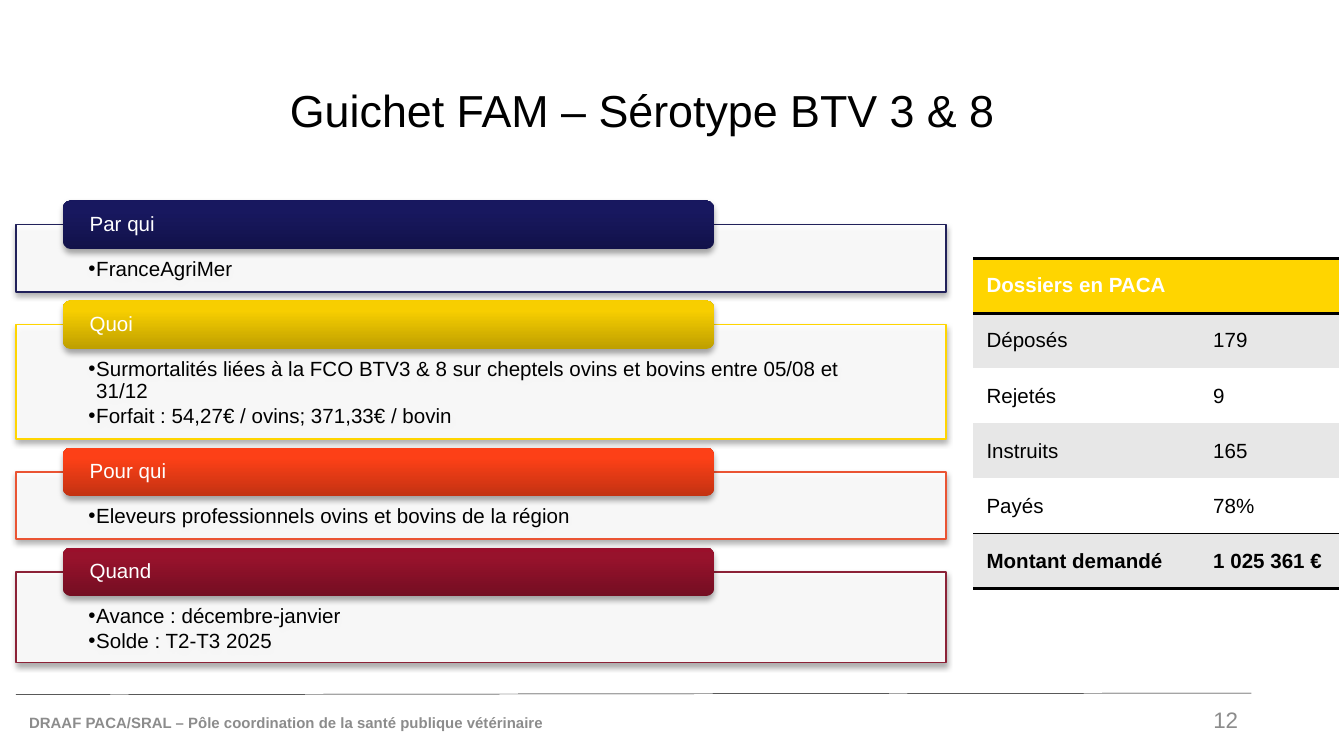
from copy import deepcopy

from lxml.etree import SubElement
from pptx import Presentation
from pptx.dml.color import RGBColor
from pptx.enum.shapes import MSO_CONNECTOR, MSO_SHAPE
from pptx.enum.text import MSO_ANCHOR, PP_ALIGN
from pptx.oxml.ns import qn
from pptx.util import Cm, Pt

BLACK = RGBColor(0x00, 0x00, 0x00)
WHITE = RGBColor(0xFF, 0xFF, 0xFF)
GREY = RGBColor(0x8C, 0x8C, 0x8C)
PALE = RGBColor(0xE7, 0xE7, 0xE7)
NAVY = RGBColor(0x21, 0x21, 0x5A)
GOLD = RGBColor(0xFF, 0xD5, 0x00)
CORAL = RGBColor(0xEA, 0x54, 0x33)
WINE = RGBColor(0x8C, 0x22, 0x37)
NAVIES = [RGBColor(0x12, 0x12, 0x4A), RGBColor(0x18, 0x18, 0x5F), RGBColor(0x16, 0x16, 0x61)]
GOLDS = [RGBColor(0xBE, 0x9F, 0x00), RGBColor(0xF7, 0xCE, 0x00), RGBColor(0xF8, 0xCF, 0x00)]
CORALS = [RGBColor(0xC3, 0x32, 0x12), RGBColor(0xFD, 0x40, 0x17), RGBColor(0xFF, 0x40, 0x16)]
WINES = [RGBColor(0x74, 0x0E, 0x22), RGBColor(0x97, 0x12, 0x2C), RGBColor(0x9A, 0x0F, 0x2B)]

PANELS = [
    ("Par qui", ["FranceAgriMer"], 1.27, NAVY, NAVIES),
    ("Quoi", [
        "Surmortalités liées à la FCO BTV3 & 8 sur cheptels ovins et bovins entre 05/08 et 31/12",
        "Forfait : 54,27€ / ovins; 371,33€ / bovin",
    ], 2.16, GOLD, GOLDS),
    ("Pour qui", ["Eleveurs professionnels ovins et bovins de la région"], 1.27, CORAL, CORALS),
    ("Quand", ["Avance : décembre-janvier", "Solde : T2-T3 2025"], 1.72, WINE, WINES),
]
ROWS = [
    ("Dossiers en PACA", ""),
    ("Déposés", "179"),
    ("Rejetés", "9"),
    ("Instruits", "165"),
    ("Payés", "78%"),
    ("Montant demandé", "1 025 361 €"),
]


def put(obj, **vals):
    """Set each named format value on an object."""
    for key, val in vals.items():
        setattr(obj, key, val)


def write(par, text, size, color, bold=False, **vals):
    """Fill one paragraph with formatted text."""
    put(par, text=text, **vals)
    put(par.font, name="Arial", size=Pt(size), bold=bold)
    par.font.color.rgb = color


def label(slide, box, text, size, color, bold=False, **vals):
    """Place one line of text in a box, centred in height."""
    frame = slide.shapes.add_textbox(*map(Cm, box)).text_frame
    put(frame, word_wrap=True, vertical_anchor=MSO_ANCHOR.MIDDLE)
    write(frame.paragraphs[0], text, size, color, bold, **vals)


def shade(shape):
    """Give a shape a soft shadow below it."""
    shape.shadow.inherit = False
    effects = shape._element.spPr.find(qn("a:effectLst"))
    outer = SubElement(effects, qn("a:outerShdw"), blurRad="40000", dist="23000",
                       dir="5400000", rotWithShape="0")
    color = SubElement(outer, qn("a:srgbClr"), val=str(BLACK))
    SubElement(color, qn("a:alpha"), val="35000")


def blend(shape, colors):
    """Fill a shape with a three-stop gradient rising from its foot."""
    fill = shape.fill
    fill.gradient()
    fill.gradient_angle = 90
    stops = shape._element.spPr.find(".//" + qn("a:gsLst"))
    stops.append(deepcopy(stops[-1]))
    for stop, place, color in zip(fill.gradient_stops, (0, 0.8, 1), colors):
        stop.position = place
        stop.color.rgb = color


def panel(slide, box, title, items, edge, colors):
    """Draw a bulleted box with a title tab across its top edge."""
    left, top, width, height = box
    body = slide.shapes.add_shape(MSO_SHAPE.RECTANGLE, *map(Cm, box))
    body.fill.solid()
    body.fill.fore_color.rgb = WHITE
    tint = body._element.spPr.find(qn("a:solidFill"))[0]
    SubElement(tint, qn("a:alpha"), val="90000")
    body.line.color.rgb = edge
    body.line.width = Pt(0.75)
    shade(body)
    frame = body.text_frame
    put(frame, word_wrap=True, vertical_anchor=MSO_ANCHOR.TOP, margin_left=Cm(1.37),
        margin_right=Cm(1.37), margin_top=Cm(0.64), margin_bottom=Cm(0.23))
    for num, item in enumerate(items):
        par = frame.add_paragraph() if num else frame.paragraphs[0]
        props = par._p.get_or_add_pPr()
        props.set("marL", str(Cm(0.15)))
        props.set("indent", str(-Cm(0.15)))
        SubElement(props, qn("a:buFont"), typeface="Arial")
        SubElement(props, qn("a:buChar"), char="•")
        write(par, item, 11, BLACK, alignment=PP_ALIGN.LEFT, line_spacing=0.9,
              space_after=Pt(1.65))

    tab = slide.shapes.add_shape(MSO_SHAPE.ROUNDED_RECTANGLE, Cm(left + 0.89),
                                 Cm(top - 0.46), Cm(0.7 * width), Cm(0.92))
    blend(tab, colors)
    tab.line.fill.background()
    shade(tab)
    put(tab.text_frame, word_wrap=True, vertical_anchor=MSO_ANCHOR.MIDDLE,
        margin_left=Cm(0.46), margin_right=Cm(0.46), margin_top=0, margin_bottom=0)
    write(tab.text_frame.paragraphs[0], title, 11, WHITE,
          alignment=PP_ALIGN.LEFT, line_spacing=0.9)


def stack(slide, left, top, width, gap):
    """Pile the panels from top to bottom with equal gaps."""
    for title, items, height, edge, colors in PANELS:
        panel(slide, (left, top, width, height), title, items, edge, colors)
        top += height + gap


def rule(cell, sides):
    """Draw black borders on the given sides of a cell."""
    props = cell._tc.get_or_add_tcPr()
    for num, (side, width) in enumerate(sides.items()):
        line = SubElement(props, qn("a:ln" + side), w=str(Pt(width)))
        fill = SubElement(line, qn("a:solidFill"))
        SubElement(fill, qn("a:srgbClr"), val=str(BLACK))
        props.insert(num, line)


def grid(slide, box):
    """Build the table of case figures."""
    table = slide.shapes.add_table(len(ROWS), 2, *map(Cm, box)).table
    put(table, first_row=False, horz_banding=False)
    style = table._tbl.tblPr.find(qn("a:tableStyleId"))
    style.text = "{2D5ABB26-0587-4C30-8999-92F81FD0307C}"
    for col, part in zip(table.columns, (0.62, 0.38)):
        col.width = Cm(box[2] * part)
    last = len(ROWS) - 1
    lines = {0: {"T": 2, "B": 2}, last - 1: {"B": 1}, last: {"T": 1, "B": 2}}
    for row, texts in enumerate(ROWS):
        table.rows[row].height = Cm(box[3] / len(ROWS))
        for col, text in enumerate(texts):
            cell = table.cell(row, col)
            cell.vertical_anchor = MSO_ANCHOR.MIDDLE
            cell.fill.solid()
            cell.fill.fore_color.rgb = GOLD if row == 0 else PALE if row % 2 else WHITE
            write(cell.text_frame.paragraphs[0], text, 11,
                  BLACK if row else WHITE, row in (0, last))
            rule(cell, lines.get(row, {}))
    table.cell(0, 0).merge(table.cell(0, 1))


def footer(slide, left, top, width):
    """Place the footer line, the service name and the page number."""
    line = slide.shapes.add_connector(MSO_CONNECTOR.STRAIGHT, Cm(left), Cm(top),
                                      Cm(left + width), Cm(top - 0.03))
    line.line.color.rgb = BLACK
    line.line.width = Pt(0.25)
    SubElement(line._element.spPr, qn("a:effectLst"))
    label(slide, (left, top + 0.15, 12.22, 0.76),
          "DRAAF PACA/SRAL – Pôle coordination de la santé publique vétérinaire",
          8, GREY, True)
    label(slide, (left + width - 1.57, top + 0.1, 1.57, 0.76), "12", 12, GREY,
          alignment=PP_ALIGN.RIGHT)


def main():
    """Build the slide and save it."""
    deck = Presentation()
    put(deck, slide_width=Cm(25.4), slide_height=Cm(14.29))
    slide = deck.slides.add_slide(deck.slide_layouts[6])
    footer(slide, 0.3, 13.13, 23.35)
    label(slide, (5.23, 0.76, 18.42, 2.77), "Guichet FAM – Sérotype BTV 3 & 8",
          24, BLACK, line_spacing=0.9)
    stack(slide, 0.3, 4.25, 17.58, 0.62)
    grid(slide, (18.39, 4.88, 6.91, 6.25))
    deck.save("out.pptx")


if __name__ == "__main__":
    main()
